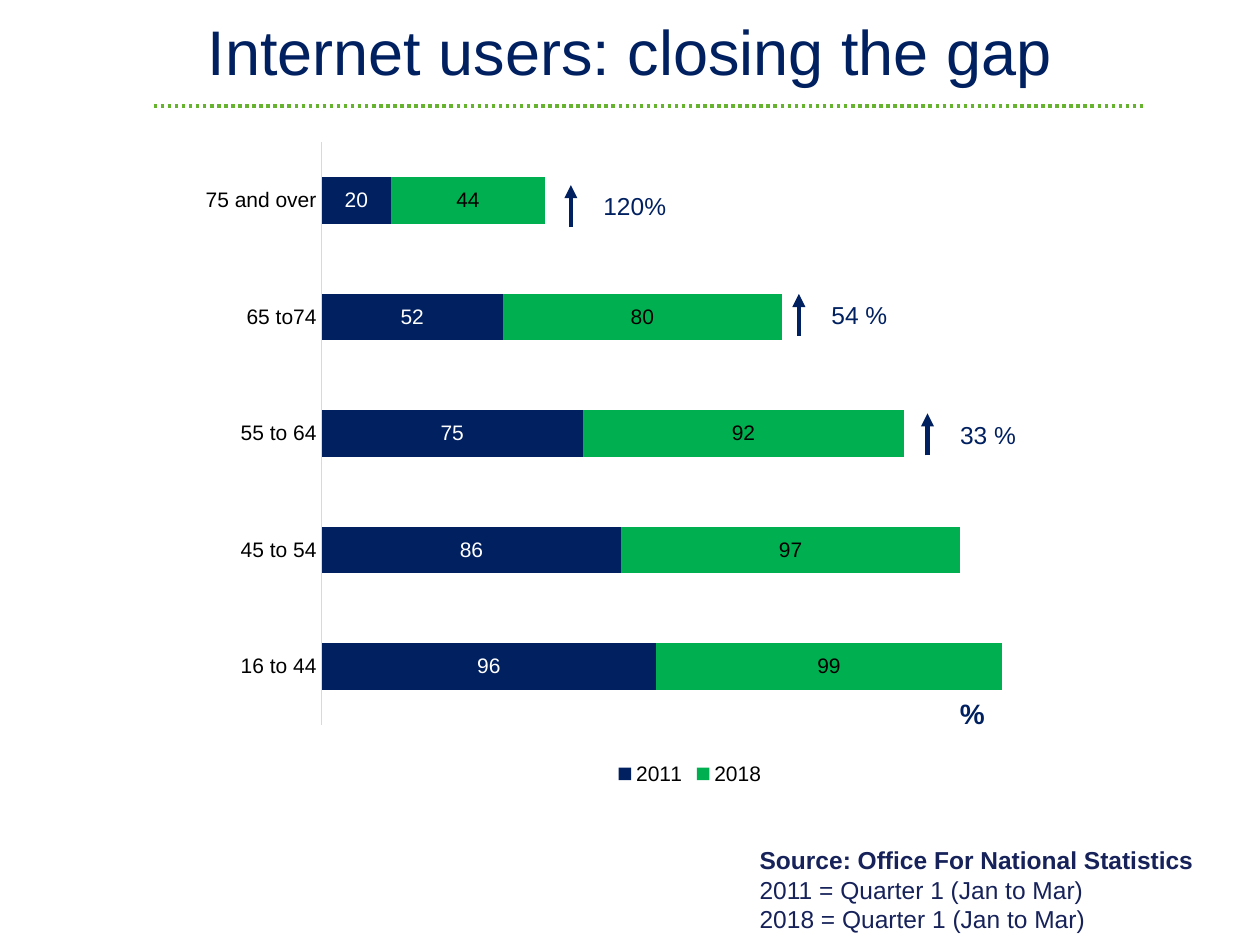
import dataclasses

import lxml.etree
import pptx
import pptx.chart.data
import pptx.dml.color
import pptx.enum.chart
import pptx.enum.dml
import pptx.enum.shapes
import pptx.enum.text
import pptx.oxml.ns
import pptx.slide
import pptx.util

Pt = pptx.util.Pt
qn = pptx.oxml.ns.qn

NAVY, GREEN, LIME = "002060", "00B050", "65B32E"
INK, BLACK, WHITE, GREY = "162259", "000000", "FFFFFF", "D9D9D9"

AGES = ["16 to 44", "45 to 54", "55 to 64", "65 to74", "75 and over"]
# name, values, bar colour, label colour
SERIES = [
    ("2011", [96, 86, 75, 52, 20], NAVY, WHITE),
    ("2018", [99, 97, 92, 80, 44], GREEN, BLACK),
]
# growth, arrow x, top
GAINS = [("33 %", 530, 236.2), ("54 %", 456.5, 168), ("120%", 326.2, 105.8)]
NOTES = [
    "Source: Office For National Statistics",
    "2011 = Quarter 1 (Jan to Mar)",
    "2018 = Quarter 1 (Jan to Mar)",
]


def rgb(code):
    return pptx.dml.color.RGBColor.from_string(code)


def style(font, size, color, face="Arial", bold=False):
    font.name, font.size, font.bold = face, Pt(size), bold
    font.color.rgb = rgb(color)


def write(para, text, size=14, color=NAVY, face="Arial", bold=False, align=None):
    run = para.add_run()
    run.text = text
    style(run.font, size, color, face, bold)
    para.alignment = align


def place(shape, left, top, width, height):
    shape.left, shape.top = Pt(left), Pt(top)
    shape.width, shape.height = Pt(width), Pt(height)


@dataclasses.dataclass
class Page:
    slide: pptx.slide.Slide
    face: str = "Arial"
    color: str = NAVY

    def title(self, text, *box):
        shape = self.slide.shapes.title
        place(shape, *box)
        frame = shape.text_frame
        frame.word_wrap = True
        frame.auto_size = pptx.enum.text.MSO_AUTO_SIZE.SHAPE_TO_FIT_TEXT
        frame.vertical_anchor = pptx.enum.text.MSO_ANCHOR.TOP
        write(frame.paragraphs[0], text, 36, self.color, self.face,
              align=pptx.enum.text.PP_ALIGN.CENTER)

    def text(self, lines, *box, wrap=True, lead=False, size=14, color=None):
        """Add a text box; lead makes its first line bold."""
        frame = self.slide.shapes.add_textbox(*map(Pt, box)).text_frame
        frame.word_wrap = wrap
        frame.auto_size = pptx.enum.text.MSO_AUTO_SIZE.SHAPE_TO_FIT_TEXT
        for i, line in enumerate(lines):
            para = frame.add_paragraph() if i else frame.paragraphs[0]
            write(para, line, size, color or self.color, self.face,
                  bold=lead and i == 0)

    def line(self, *ends, color=None, width=2.5, dash=None, arrow=False):
        kind = pptx.enum.shapes.MSO_CONNECTOR.STRAIGHT
        shape = self.slide.shapes.add_connector(kind, *map(Pt, ends))
        shape.line.color.rgb = rgb(color or self.color)
        shape.line.width = Pt(width)
        if dash:
            shape.line.dash_style = dash
        if arrow:
            edge = shape.line._get_or_add_ln()
            lxml.etree.SubElement(edge, qn("a:tailEnd"), type="triangle")
        lxml.etree.SubElement(shape._element.spPr, qn("a:effectLst"))

    def chart(self, cats, series, *box):
        data = pptx.chart.data.CategoryChartData(number_format="0")
        data.categories = cats
        for name, values, _, _ in series:
            data.add_series(name, values)
        kind = pptx.enum.chart.XL_CHART_TYPE.BAR_STACKED
        chart = self.slide.shapes.add_chart(kind, *map(Pt, box), data).chart
        style(chart.font, 10, BLACK, "Calibri")
        chart.has_title = False

        chart.has_legend = True
        chart.legend.position = pptx.enum.chart.XL_LEGEND_POSITION.BOTTOM
        chart.legend.include_in_layout = False
        style(chart.legend.font, 12, BLACK, self.face)

        axis = chart.category_axis
        axis.major_tick_mark = pptx.enum.chart.XL_TICK_MARK.NONE
        axis.format.line.color.rgb = rgb(GREY)
        axis.format.line.width = Pt(0.75)
        style(axis.tick_labels.font, 12, BLACK, self.face)

        scale = chart.value_axis
        scale.visible = scale.has_major_gridlines = False
        scale.minimum_scale, scale.maximum_scale = 0, 250

        plot = chart.plots[0]
        plot.gap_width, plot.overlap = 150, 100
        plot.vary_by_categories = False
        for bars, (_, _, fill, ink) in zip(plot.series, series):
            bars.format.fill.solid()
            bars.format.fill.fore_color.rgb = rgb(fill)
            labels = bars.data_labels
            labels.show_value = True
            labels.number_format = "0"
            labels.number_format_is_linked = False
            style(labels.font, 12, ink, self.face)
        self.fit(chart, x=0.143, y=0.026, w=0.845, h=0.876)

    def fit(self, chart, **area):
        """Fix the inner plot area as fractions of the chart."""
        plot = chart._chartSpace.chart.plotArea
        for old in plot.findall(qn("c:layout")):
            plot.remove(old)
        layout = lxml.etree.Element(qn("c:layout"))
        plot.insert(0, layout)
        manual = lxml.etree.SubElement(layout, qn("c:manualLayout"))
        rules = {"layoutTarget": "inner", "xMode": "edge", "yMode": "edge", **area}
        for tag, val in rules.items():
            lxml.etree.SubElement(manual, qn("c:" + tag), val=str(val))


def main():
    deck = pptx.Presentation()
    deck.slide_width, deck.slide_height = Pt(720), Pt(540)
    page = Page(deck.slides.add_slide(deck.slide_layouts[5]))

    page.chart(AGES, SERIES, 99.4, 71.3, 589.7, 380.2)
    page.text(NOTES, 427, 479.5, 360, 58.3, lead=True, color=INK)
    page.title("Internet users: closing the gap", 8.6, 3.6, 702.8, 51)
    page.text(["%"], 541.4, 394.6, 28.8, 26.6, wrap=False, lead=True, size=16)
    page.line(87.8, 60.5, 654.5, 60.5, color=LIME, width=2,
              dash=pptx.enum.dml.MSO_LINE.ROUND_DOT)
    for gain, x, top in GAINS:
        page.text([gain], x + 11.5, top, 51, 24.2)
        page.line(x, top + 24, x, top, arrow=True)

    deck.save("out.pptx")


if __name__ == "__main__":
    main()
